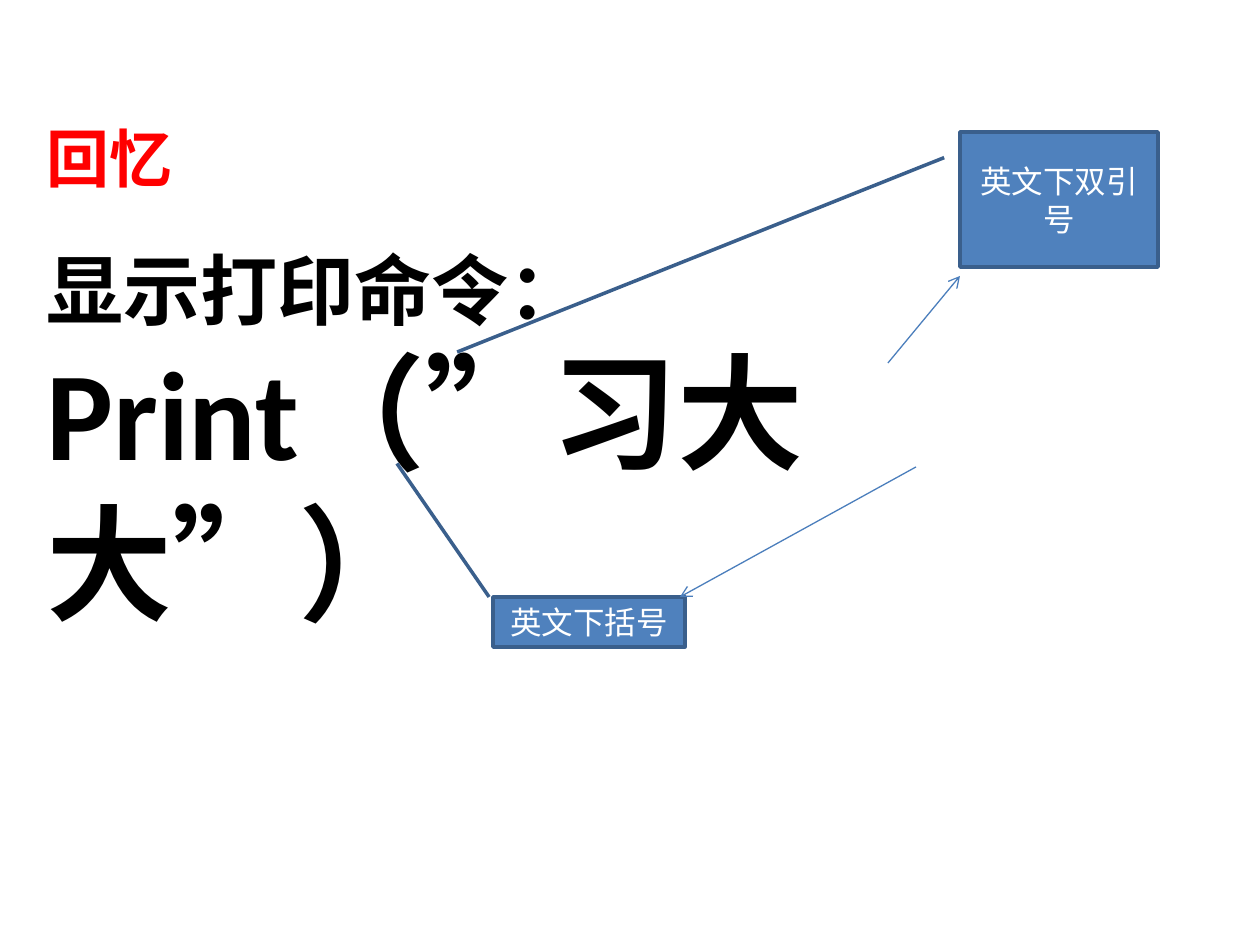
import pptx
import pptx.util
import pptx.dml.color
import pptx.enum.shapes
import pptx.enum.text
import pptx.oxml.ns
import lxml.etree

RGB = pptx.dml.color.RGBColor
BLUE = RGB(0x4F, 0x81, 0xBD)
EDGE = RGB(0x3A, 0x5F, 0x8C)
ARROW = RGB(0x4B, 0x7E, 0xBC)
WHITE = RGB(0xFF, 0xFF, 0xFF)
BLACK = RGB(0, 0, 0)
RED = RGB(0xFF, 0, 0)
PX = pptx.util.Inches(1) // 126
ALIGN = pptx.enum.text.PP_ALIGN
ANCHOR = pptx.enum.text.MSO_ANCHOR
FIT = pptx.enum.text.MSO_AUTO_SIZE


def scale(*nums):
    return [num * PX for num in nums]


def write(para, text, size, color, bold, align):
    para.text = text
    para.alignment = align
    para.font.name = "Calibri"
    para.font.size = pptx.util.Pt(size)
    para.font.bold = bold
    para.font.color.rgb = color


deck = pptx.Presentation()
deck.slide_width, deck.slide_height = scale(1260, 945)
slide = deck.slides.add_slide(deck.slide_layouts[5])
shapes = slide.shapes

title = shapes.title
title.left, title.top, title.width, title.height = scale(34, 113, 151, 89)
frame = title.text_frame
frame.auto_size = FIT.NONE
frame.word_wrap = True
frame.margin_right = 0
frame.vertical_anchor = ANCHOR.TOP
write(frame.paragraphs[0], "回忆", 36, RED, True, ALIGN.LEFT)

code = shapes.add_textbox(*scale(34, 236, 1149, 411))
frame = code.text_frame
frame.word_wrap = True
write(frame.paragraphs[0], "显示打印命令：", 44, BLACK, True, ALIGN.LEFT)
write(frame.add_paragraph(), "Print（”习大大”）", 72, BLACK, True, ALIGN.LEFT)

notes = [
    ("英文下括号", (493, 597, 192, 50), (0, -0.02, -2.67, -0.5)),
    ("英文下双引号", (960, 132, 198, 135), (0.19, -0.08, 1.63, -2.54)),
]
for text, box, tips in notes:
    note = shapes.add_shape(
        pptx.enum.shapes.MSO_SHAPE.LINE_CALLOUT_1, *scale(*box))
    note.shadow.inherit = False
    for spot, tip in enumerate(tips):
        note.adjustments[spot] = tip
    note.fill.solid()
    note.fill.fore_color.rgb = BLUE
    note.line.color.rgb = EDGE
    note.line.width = pptx.util.Pt(2)
    frame = note.text_frame
    frame.word_wrap = True
    frame.vertical_anchor = ANCHOR.MIDDLE
    write(frame.paragraphs[0], text, 18, WHITE, False, ALIGN.CENTER)

for ends in [(916, 467, 680, 597), (888, 363, 960, 276)]:
    arrow = shapes.add_connector(
        pptx.enum.shapes.MSO_CONNECTOR.STRAIGHT, *scale(*ends))
    arrow.line.color.rgb = ARROW
    arrow.line.width = pptx.util.Pt(0.75)
    stroke = arrow.line._get_or_add_ln()
    lxml.etree.SubElement(stroke, pptx.oxml.ns.qn("a:tailEnd"), type="arrow")
    lxml.etree.SubElement(
        arrow._element.spPr, pptx.oxml.ns.qn("a:effectLst"))

deck.save("out.pptx")
